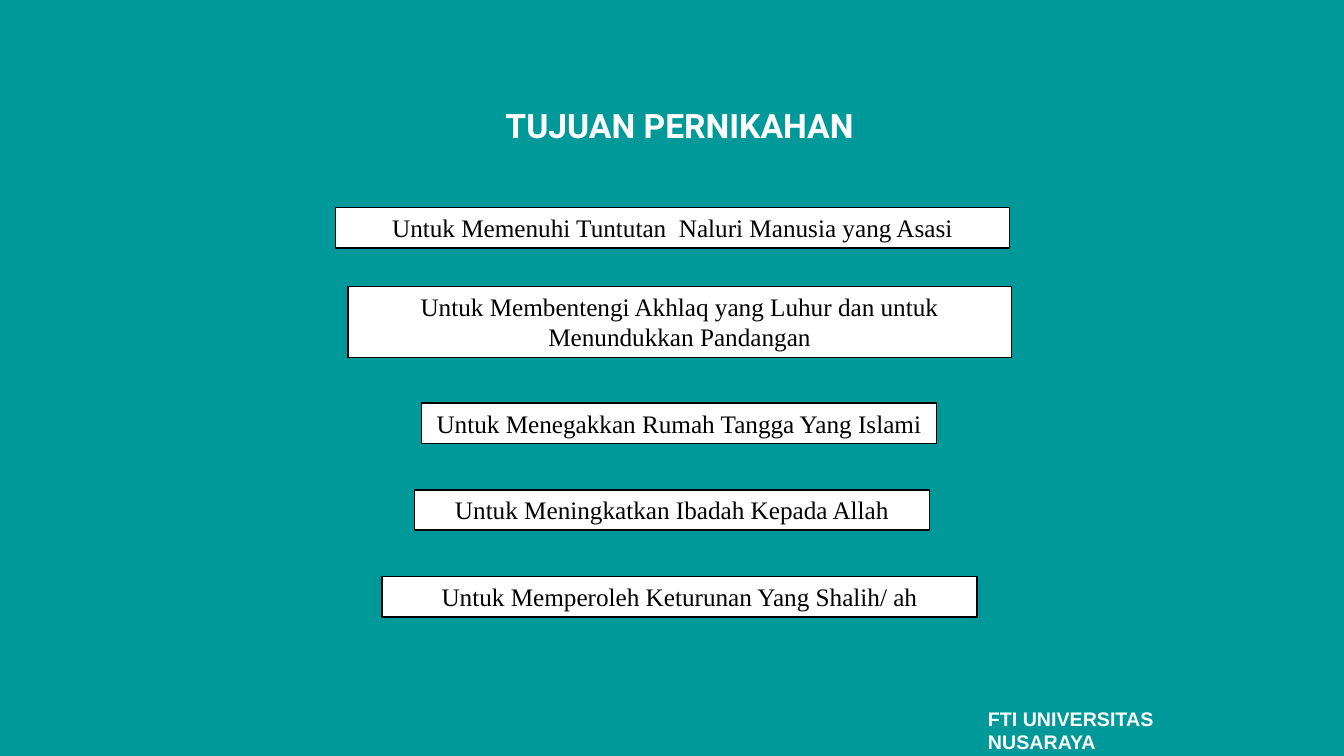
from dataclasses import dataclass

from pptx import Presentation
from pptx.dml.color import RGBColor as RGB
from pptx.enum.shapes import MSO_SHAPE as Shape
from pptx.enum.text import MSO_ANCHOR as Anchor, PP_ALIGN as Align
from pptx.util import Inches, Pt


@dataclass(frozen=True)
class Theme:
    teal: RGB = RGB(0x00, 0x99, 0x99)
    white: RGB = RGB(0xFF, 0xFF, 0xFF)
    black: RGB = RGB(0x00, 0x00, 0x00)
    head: tuple = ("Roboto", 24, True)
    body: tuple = ("Times New Roman", 18, False)
    foot: tuple = ("Arial", 14, True)


class Deck:
    def __init__(self, theme, slide):
        self.theme = theme
        self.slide = slide

    def put_text(self, shape, text, style, color, align):
        frame = shape.text_frame
        frame.word_wrap = True
        frame.vertical_anchor = Anchor.TOP
        para = frame.paragraphs[0]
        para.alignment = align
        run = para.add_run()
        run.text = text
        font = run.font
        font.name, size, font.bold = style
        font.size = Pt(size)
        font.color.rgb = color

    def rect(self, area, fill, line=None):
        shape = self.slide.shapes.add_shape(Shape.RECTANGLE, *map(Inches, area))
        shape.shadow.inherit = False
        shape.fill.solid()
        shape.fill.fore_color.rgb = fill
        if line is None:
            shape.line.fill.background()
        else:
            shape.line.color.rgb = line
            shape.line.width = Pt(1)
        return shape

    def label(self, area, text, style, align):
        box = self.slide.shapes.add_textbox(*map(Inches, area))
        self.put_text(box, text, style, self.theme.white, align)

    def card(self, area, text):
        theme = self.theme
        shape = self.rect(area, theme.white, theme.black)
        self.put_text(shape, text, theme.body, theme.black, Align.CENTER)


# Left, top, width, height and wording of each goal
GOALS = [
    ((3.33, 2.06, 6.68, 0.4), "Untuk Memenuhi Tuntutan  Naluri Manusia yang Asasi"),
    ((3.45, 2.84, 6.58, 0.71),
     "Untuk Membentengi Akhlaq yang Luhur dan untuk Menundukkan Pandangan"),
    ((4.18, 4, 5.11, 0.4), "Untuk Menegakkan Rumah Tangga Yang Islami"),
    ((4.11, 4.86, 5.11, 0.4), "Untuk Meningkatkan Ibadah Kepada Allah"),
    ((3.79, 5.72, 5.9, 0.4), "Untuk Memperoleh Keturunan Yang Shalih/ ah"),
]


def main():
    show = Presentation()
    show.slide_width, show.slide_height = Inches(13.33), Inches(7.5)
    theme = Theme()
    deck = Deck(theme, show.slides.add_slide(show.slide_layouts[6]))

    # Backdrop and title
    deck.rect((0, 0, 13.33, 7.5), theme.teal)
    deck.label((4.5, 0.99, 4.48, 0.5), "TUJUAN PERNIKAHAN", theme.head, Align.CENTER)

    # Goals of marriage
    for area, text in GOALS:
        deck.card(area, text)

    # Footer
    deck.label((9.7, 6.96, 2.95, 0.34), "FTI UNIVERSITAS NUSARAYA", theme.foot, Align.LEFT)

    show.save("out.pptx")


if __name__ == "__main__":
    main()
